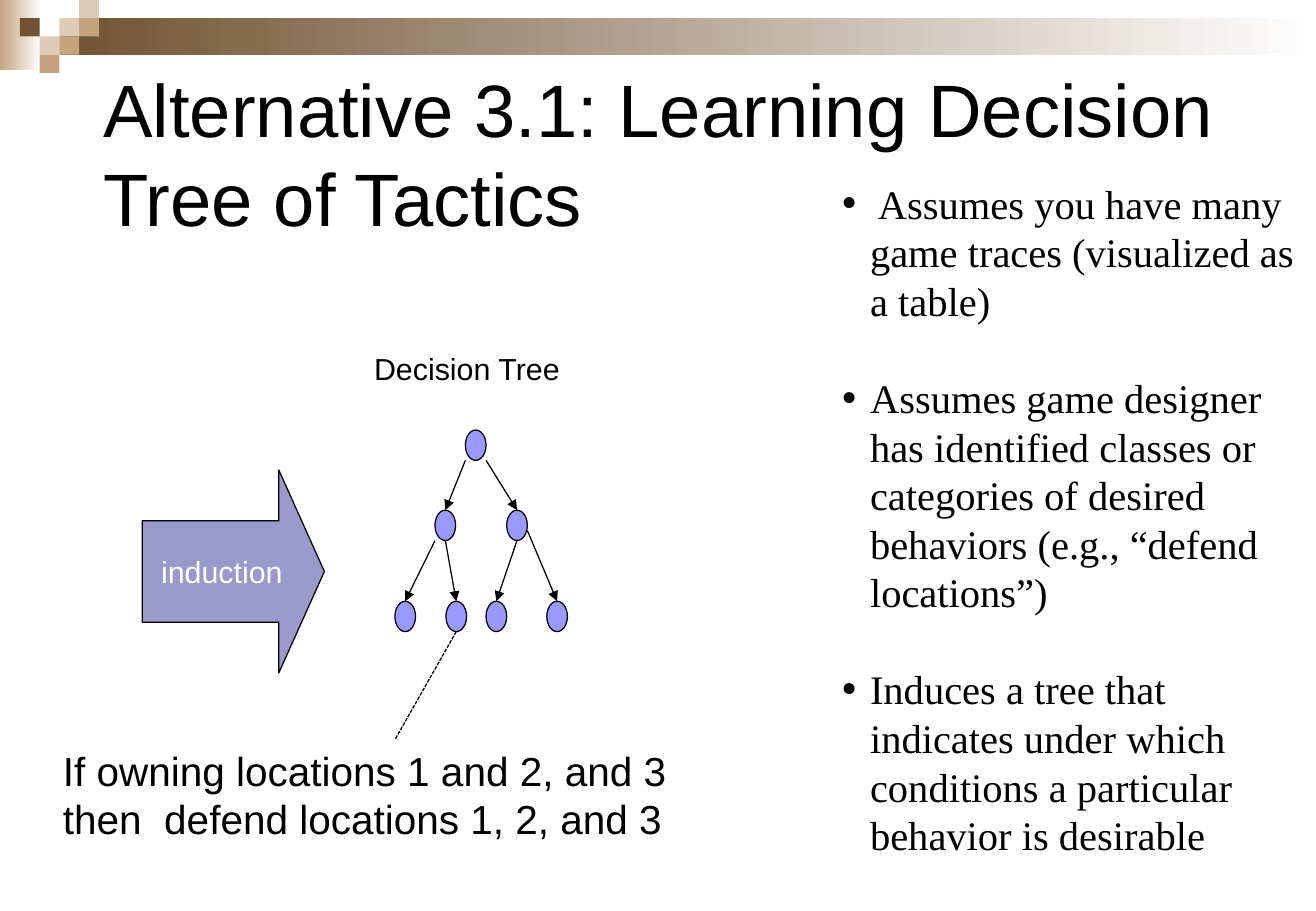
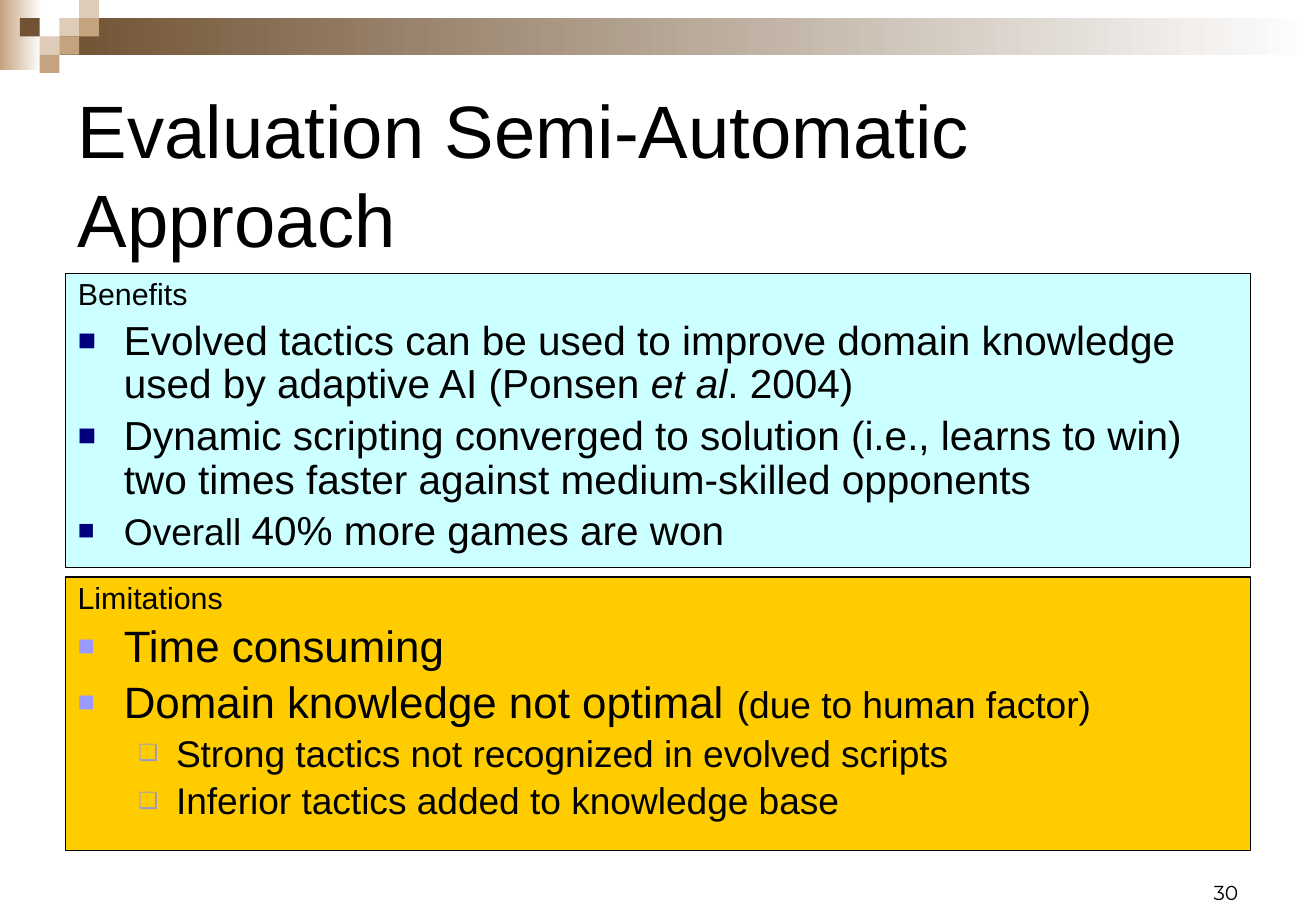
from lxml import etree
from pptx import Presentation
from pptx.dml.color import RGBColor
from pptx.enum.dml import MSO_LINE
from pptx.enum.shapes import MSO_CONNECTOR, MSO_SHAPE
from pptx.enum.text import MSO_ANCHOR, MSO_AUTO_SIZE, PP_ALIGN
from pptx.oxml.ns import qn
from pptx.util import Inches, Pt

RECT, OVAL, ARROW = MSO_SHAPE.RECTANGLE, MSO_SHAPE.OVAL, MSO_SHAPE.RIGHT_ARROW
LINE, DASH = MSO_CONNECTOR.STRAIGHT, MSO_LINE.SQUARE_DOT
LEFT, CENTER, RIGHT = PP_ALIGN.LEFT, PP_ALIGN.CENTER, PP_ALIGN.RIGHT
TOP, MIDDLE, BOTTOM = MSO_ANCHOR.TOP, MSO_ANCHOR.MIDDLE, MSO_ANCHOR.BOTTOM
FIXED = MSO_AUTO_SIZE.NONE

BLACK = RGBColor(0x00, 0x00, 0x00)
WHITE = RGBColor(0xFF, 0xFF, 0xFF)
BROWN = RGBColor(0x71, 0x53, 0x33)
TAN = RGBColor(0xC4, 0xA3, 0x7E)
SAND = RGBColor(0xDE, 0xCC, 0xB8)
NAVY = RGBColor(0x00, 0x00, 0x7D)
LILAC = RGBColor(0x99, 0x99, 0xFF)
SLATE = RGBColor(0x99, 0x99, 0xCC)
CYAN = RGBColor(0xCC, 0xFF, 0xFF)
GOLD = RGBColor(0xFF, 0xCC, 0x00)
SANS, SERIF, PAGE = "Arial", "Times New Roman", "Montserrat"

WIDTH, HEIGHT = 10.83, 7.5
HANG = 0.38
NODE_W, NODE_H = 0.17, 0.25


# Basic parts
def place(shape, box):
    shape.left, shape.top, shape.width, shape.height = map(Inches, box)


def edge(line):
    line.color.rgb = BLACK
    line.width = Pt(0.75)


def add_box(slide, kind, box, color, outline=True):
    shape = slide.shapes.add_shape(kind, *map(Inches, box))
    shape.shadow.inherit = False
    shape.fill.solid()
    shape.fill.fore_color.rgb = color
    if outline:
        edge(shape.line)
    else:
        shape.line.fill.background()
    return shape


def add_line(slide, start, end, head=True):
    line = slide.shapes.add_connector(LINE, *map(Inches, (*start, *end)))
    edge(line.line)
    props = line._element.spPr
    if head:
        tip = etree.SubElement(line.line._get_or_add_ln(), qn("a:tailEnd"))
        tip.set("type", "triangle")
    etree.SubElement(props, qn("a:effectLst"))
    return line


def style(run, size, color=BLACK, name=SANS):
    run.font.size = Pt(size)
    run.font.name = name
    run.font.color.rgb = color


def add_text(slide, box, text, size, name=SANS, align=LEFT, anchor=TOP):
    frame = slide.shapes.add_textbox(*map(Inches, box)).text_frame
    frame.word_wrap = True
    frame.vertical_anchor = anchor
    frame.text = text
    frame.paragraphs[0].alignment = align
    style(frame.paragraphs[0].runs[0], size, name=name)


def set_bullet(para, margin, hang, char=None, color=BLACK, scale=100):
    props = para._p.get_or_add_pPr()
    props.set("marL", str(Inches(margin)))
    props.set("indent", str(-Inches(hang)))
    if char is None:
        etree.SubElement(props, qn("a:buNone"))
        return
    tint = etree.SubElement(props, qn("a:buClr"))
    etree.SubElement(tint, qn("a:srgbClr")).set("val", str(color))
    etree.SubElement(props, qn("a:buSzPct")).set("val", str(scale * 1000))
    etree.SubElement(props, qn("a:buFont")).set("typeface", SANS)
    etree.SubElement(props, qn("a:buChar")).set("char", char)


# Shared corner pattern, band and title
def add_fade(slide, box, color):
    shape = add_box(slide, RECT, box, color, outline=False)
    shape.fill.gradient()
    shape.fill.gradient_angle = 0
    for stop, tone in zip(shape.fill.gradient_stops, (color, WHITE)):
        stop.color.rgb = tone


def add_band(slide):
    wide, high = 0.163, 0.15
    add_fade(slide, (0, 0, 0.34, 0.58), TAN)
    add_fade(slide, (0.49, high, WIDTH - 0.49, 2 * high), BROWN)
    tiles = ((3, 1, SAND), (4, 0, SAND), (4, 1, TAN), (2, 2, SAND),
             (1, 1, BROWN), (3, 2, TAN), (2, 3, TAN))
    for col, row, color in tiles:
        add_box(slide, RECT, (col * wide, row * high, wide, high),
                color, outline=False)


def new_slide(deck, title, box):
    slide = deck.slides.add_slide(deck.slide_layouts[1])
    add_band(slide)
    head = slide.shapes.title
    place(head, box)
    frame = head.text_frame
    frame.text = title
    frame.auto_size = FIXED
    frame.vertical_anchor = MIDDLE
    frame.paragraphs[0].alignment = LEFT
    style(frame.paragraphs[0].runs[0], 44)
    return slide


# Induction arrow and decision tree
def add_tree(slide, box):
    left, top = box[:2]
    arrow = add_box(slide, ARROW, (left, top + 1.04, 1.5, 1.67), SLATE)
    arrow.adjustments[1] = 0.25
    frame = arrow.text_frame
    frame.word_wrap = False
    frame.vertical_anchor = MIDDLE
    frame.text = "induction"
    frame.paragraphs[0].alignment = CENTER
    style(frame.paragraphs[0].runs[0], 18, WHITE)
    add_text(slide, (left + 1.81, top, 2.15, 0.5), "Decision Tree", 18)

    spots = [(2.66, 0.71), (2.41, 1.37), (3, 1.37),
             (2.08, 2.12), (2.5, 2.12), (2.83, 2.12), (3.33, 2.12)]
    nodes = [(left + x, top + y) for x, y in spots]
    for node in nodes:
        add_box(slide, OVAL, (*node, NODE_W, NODE_H), LILAC)

    # Each branch leaves its parent at a share of the node's size
    branches = ((0, 1, 0, 1), (0, 2, 1, 1), (1, 3, 0, 1),
                (1, 4, 0.5, 1), (2, 5, 0.5, 1), (2, 6, 1, 0.67))
    for upper, lower, across, down in branches:
        x, y = nodes[upper]
        end = nodes[lower]
        add_line(slide, (x + across * NODE_W, y + down * NODE_H),
                 (end[0] + NODE_W / 2, end[1]))

    x, y = nodes[4]
    note = add_line(slide, (x + NODE_W / 2, y + NODE_H),
                    (left + 2.08, top + 3.26), head=False)
    note.line.dash_style = DASH


def fill_points(shape, box, points):
    place(shape, box)
    frame = shape.text_frame
    frame.auto_size = FIXED
    frame.text = "\n".join(points)
    for index, para in enumerate(frame.paragraphs):
        set_bullet(para, 0.23, 0.23, "•")
        para.space_before = Pt(28.8 if index else 0)
        style(para.runs[0], 24, name=SERIF)


# Panel of a heading and bullets: (level, [(text, size, italic)])
def fill_panel(shape, heading, items, marks):
    frame = shape.text_frame
    frame.auto_size = FIXED
    frame.word_wrap = True
    frame.vertical_anchor = TOP
    rows = [(None, [(heading, 18, False)])] + items
    for index, (level, parts) in enumerate(rows):
        para = frame.add_paragraph() if index else frame.paragraphs[0]
        para.level = level or 0
        if level is None:
            set_bullet(para, HANG, HANG)
        else:
            set_bullet(para, *((0.81, 0.31) if level else (HANG, HANG)),
                       *marks[level])
        para.alignment = LEFT
        para.line_spacing = 0.9
        para.space_before = Pt(0.2 * parts[0][1] if index else 0)
        for text, size, slant in parts:
            run = para.add_run()
            run.text = text
            style(run, size)
            run.font.italic = slant


def build_tactics(deck):
    slide = new_slide(deck, "Alternative 3.1: Learning Decision Tree of Tactics",
                      (0.75, 0.5, 9.75, 1.5))
    fill_points(slide.placeholders[1], (6.83, 1.42, 4, 5.76), (
        " Assumes you have many game traces (visualized as a table)",
        "Assumes game designer has identified classes or categories of "
        "desired behaviors (e.g., “defend locations”)",
        "Induces a tree that indicates under which conditions a particular "
        "behavior is desirable"))
    add_text(slide, (0.42, 6.09, 5.67, 0.91),
             "If owning locations 1 and 2, and 3 then  defend locations "
             "1, 2, and 3", 24)
    add_tree(slide, (1.17, 2.83, 3.96, 3.26))


def build_review(deck):
    slide = new_slide(deck, "Evaluation Semi-Automatic Approach",
                      (0.54, 0.8, 9.84, 1.25))
    add_text(slide, (7.76, 7.24, 2.53, 0.26), "30", 12, PAGE, RIGHT, BOTTOM)

    gains = slide.placeholders[1]
    place(gains, (0.54, 2.25, 9.75, 2.42))
    gains.fill.solid()
    gains.fill.fore_color.rgb = CYAN
    edge(gains.line)
    fill_panel(gains, "Benefits", [
        (0, [("Evolved tactics can be used to improve domain knowledge used "
              "by adaptive AI (Ponsen ", 24, False),
             ("et al", 24, True), (". 2004)", 24, False)]),
        (0, [("Dynamic scripting converged to solution (i.e., learns to win) "
              "two times faster against medium-skilled opponents", 24, False)]),
        (0, [("Overall ", 22, False), ("40% more games are won", 24, False)]),
    ], [("■", NAVY, 75)])

    limits = add_box(slide, RECT, (0.54, 4.75, 9.75, 2.25), GOLD)
    fill_panel(limits, "Limitations", [
        (0, [("Time consuming", 26, False)]),
        (0, [("Domain knowledge not optimal ", 26, False),
             ("(due to human factor)", 22, False)]),
        (1, [("Strong tactics not recognized in evolved scripts", 22, False)]),
        (1, [("Inferior tactics added to knowledge base", 22, False)]),
    ], [("■", LILAC, 65), ("❑", SLATE, 60)])


def main():
    deck = Presentation()
    deck.slide_width, deck.slide_height = Inches(WIDTH), Inches(HEIGHT)
    build_tactics(deck)
    build_review(deck)
    deck.save("out.pptx")


if __name__ == "__main__":
    main()
